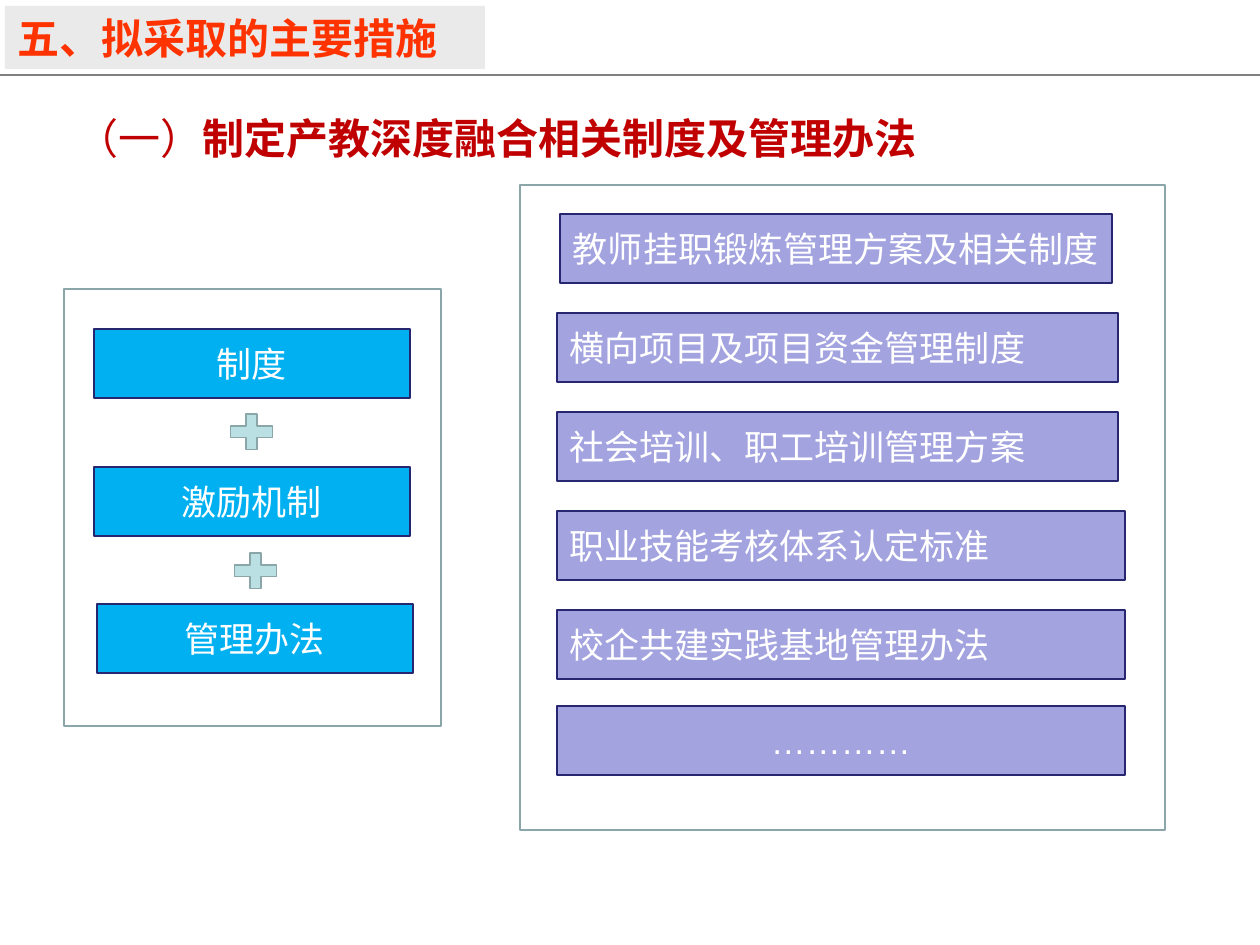
from lxml import etree
from pptx import Presentation
from pptx import util as u
from pptx.dml.color import RGBColor
from pptx.enum import shapes, text
from pptx.oxml.ns import qn

PX = 914400 // 126
COLORS = {
    "rule": "808080", "band": "EAEAEA", "title": "FF3300", "head": "C00000",
    "lilac": "A3A3E0", "blue": "00B0F0", "edge": "262671",
    "plus": "BBE0E3", "frame": "8AA6A8", "white": "FFFFFF",
}
LEFT, MID = text.PP_ALIGN.LEFT, text.PP_ALIGN.CENTER
KIND = shapes.MSO_SHAPE
BAR = 69


def rgb(name):
    return RGBColor.from_string(COLORS[name])


def emu(*sizes):
    return [size * PX for size in sizes]


def add_shape(slide, box, fill=None, line=None, kind=KIND.RECTANGLE):
    shape = slide.shapes.add_shape(kind, *emu(*box))
    shape.shadow.inherit = False
    if fill:
        shape.fill.solid()
        shape.fill.fore_color.rgb = rgb(fill)
    else:
        shape.fill.background()
    if line:
        shape.line.color.rgb = rgb(line)
        shape.line.width = u.Pt(1)
    else:
        shape.line.fill.background()
    return shape


def add_run(para, words, size, color, bold=False):
    run = para.add_run()
    run.text = words
    font = run.font
    font.name, font.size, font.bold = "Arial", u.Pt(size), bold
    font.color.rgb = rgb(color)


def add_bar(slide, box, words, fill, align):
    frame = add_shape(slide, box, fill, "edge").text_frame
    frame.word_wrap = True
    frame.vertical_anchor = text.MSO_ANCHOR.MIDDLE
    para = frame.paragraphs[0]
    para.alignment = align
    add_run(para, words, 20, "white")


def add_header(slide, x, y, w, h):
    """Draw the full-width rule and the shaded title band in the box."""
    rule = slide.shapes.add_connector(
        shapes.MSO_CONNECTOR.STRAIGHT, *emu(x, y + h, x + w, y + h))
    rule.line.color.rgb = rgb("rule")
    rule.line.width = u.Pt(1.5)
    etree.SubElement(rule._element.spPr, qn("a:effectLst"))
    frame = add_shape(slide, (x + 5, y + 6, 480, 63), "band").text_frame
    frame.word_wrap = True
    frame.auto_size = text.MSO_AUTO_SIZE.SHAPE_TO_FIT_TEXT
    frame.vertical_anchor = text.MSO_ANCHOR.TOP
    para = frame.paragraphs[0]
    para.alignment = LEFT
    add_run(para, "五、拟采取的主要措施", 24, "title", True)


def add_heading(slide, x, y, w, h):
    frame = slide.shapes.add_textbox(*emu(x, y, w, h)).text_frame
    frame.word_wrap = False
    frame.auto_size = text.MSO_AUTO_SIZE.SHAPE_TO_FIT_TEXT
    para = frame.paragraphs[0]
    add_run(para, "（一）", 24, "head")
    add_run(para, "制定产教深度融合相关制度及管理办法", 24, "head", True)


def add_sum(slide, x, y, w, h):
    """Draw three stacked bars joined by plus signs."""
    parts = [("制度", 30, 40), ("激励机制", 30, 178), ("管理办法", 33, 315)]
    for words, dx, dy in parts:
        add_bar(slide, (x + dx, y + dy, 316, BAR), words, "blue", MID)
    for dx, dy in [(159, 119), (163, 258)]:
        add_shape(slide, (x + dx, y + dy, 57, 48), "plus", "frame",
                  KIND.MATH_PLUS)
    add_shape(slide, (x, y, w, h), line="frame")


def add_rules(slide, x, y, w, h):
    """Draw the framed list of rules, one bar each at an even pitch."""
    rows = [
        ("教师挂职锻炼管理方案及相关制度", 40, 552, MID),
        ("横向项目及项目资金管理制度", 37, 561, LEFT),
        ("社会培训、职工培训管理方案", 37, 561, LEFT),
        ("职业技能考核体系认定标准", 37, 568, LEFT),
        ("校企共建实践基地管理办法", 37, 568, LEFT),
    ]
    for i, (words, dx, wide, align) in enumerate(rows):
        box = (x + dx, y + 29 + 99 * i, wide, BAR)
        add_bar(slide, box, words, "lilac", align)
    add_bar(slide, (x + 37, y + 521, 568, BAR), "…………", "lilac", MID)
    add_shape(slide, (x, y, w, h), line="frame")


def main():
    deck = Presentation()
    deck.slide_width, deck.slide_height = u.Inches(10), u.Inches(7.5)
    slide = deck.slides.add_slide(deck.slide_layouts[6])
    add_header(slide, 0, 0, 1260, 75)
    add_heading(slide, 64, 106, 868, 63)
    add_sum(slide, 64, 289, 377, 437)
    add_rules(slide, 520, 185, 645, 645)
    deck.save("out.pptx")


if __name__ == "__main__":
    main()
